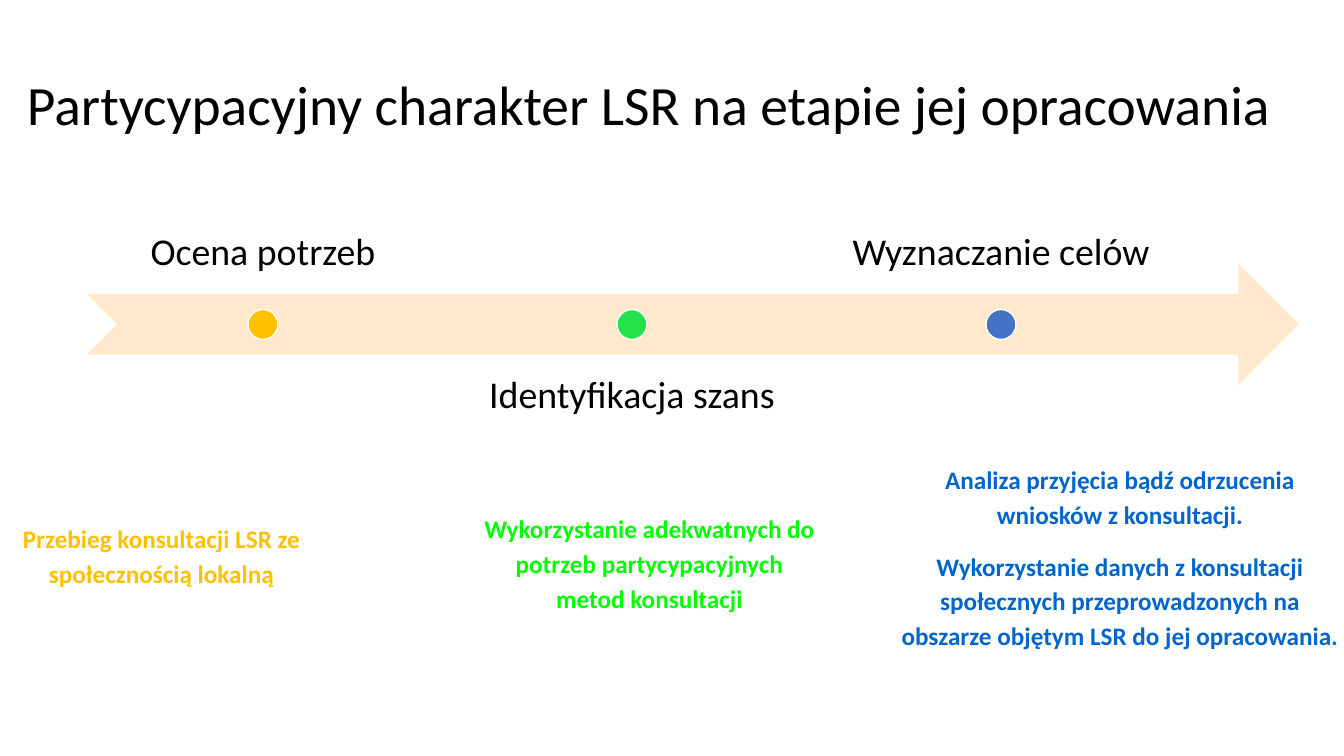
"""Builds a slide with a three-step timeline of participatory LSR preparation."""
from pptx import Presentation
from pptx.dml.color import RGBColor
from pptx.enum.shapes import MSO_SHAPE
from pptx.enum.text import MSO_ANCHOR, PP_ALIGN
from pptx.util import Pt

ARROW, DOT = MSO_SHAPE.NOTCHED_RIGHT_ARROW, MSO_SHAPE.OVAL
TOP, MIDDLE, BOTTOM = MSO_ANCHOR.TOP, MSO_ANCHOR.MIDDLE, MSO_ANCHOR.BOTTOM
LEFT, CENTER = PP_ALIGN.LEFT, PP_ALIGN.CENTER

BLACK = RGBColor(0x00, 0x00, 0x00)
WHITE = RGBColor(0xFF, 0xFF, 0xFF)
CREAM = RGBColor(0xFF, 0xE8, 0xCC)
AMBER = RGBColor(0xFF, 0xC0, 0x00)
EMERALD = RGBColor(0x23, 0xE1, 0x48)
LIME = RGBColor(0x00, 0xFF, 0x00)
STEEL_BLUE = RGBColor(0x44, 0x72, 0xC4)
BLUE = RGBColor(0x00, 0x66, 0xCC)

TITLE = "Partycypacyjny charakter LSR na etapie jej opracowania"
STEPS = [
    ("Ocena potrzeb", AMBER),
    ("Identyfikacja szans", EMERALD),
    ("Wyznaczanie celów", STEEL_BLUE),
]
NOTES = [
    ((1, 514, 321, 419), AMBER,
     ["Przebieg konsultacji LSR ze społecznością lokalną"]),
    ((471, 504, 357, 114), LIME,
     ["Wykorzystanie adekwatnych do potrzeb partycypacyjnych metod konsultacji"]),
    ((888, 455, 464, 242), BLUE,
     ["Analiza przyjęcia bądź odrzucenia wniosków z konsultacji.",
      "Wykorzystanie danych z konsultacji społecznych przeprowadzonych na "
      "obszarze objętym LSR do jej opracowania."]),
]

EMU_PER_PX = 914400 / 100.8
FONT = "Calibri"
SLIDE_SIZE = (1344, 756)
TITLE_BOX = (17, 59, 1294, 96)
ARROW_BOX = (87, 264, 1212, 121)
LABEL_WIDTH, LABEL_HEIGHT, LABEL_INSET = 352, 121, 21
LABEL_TOPS = (173, 355)
STEP_PITCH = 369
DOT_SIZE = 30


def px(length):
    return round(length * EMU_PER_PX)


def add_text(slide, box, lines, size, color, anchor=TOP, align=CENTER,
             spacing=0.9, gap=0, bold=False, insets=(10, 5)):
    frame = slide.shapes.add_textbox(*map(px, box)).text_frame
    frame.word_wrap = True
    frame.vertical_anchor = anchor
    frame.margin_left = frame.margin_right = px(insets[0])
    frame.margin_top = frame.margin_bottom = px(insets[1])
    frame.text = "\n".join(lines)
    for paragraph in frame.paragraphs:
        paragraph.alignment = align
        paragraph.line_spacing = spacing
        paragraph.space_before = paragraph.space_after = Pt(gap)
        font = paragraph.runs[0].font
        font.name, font.size, font.bold = FONT, Pt(size), bold
        font.color.rgb = color


def add_filled_shape(slide, kind, box, color):
    shape = slide.shapes.add_shape(kind, *map(px, box))
    shape.shadow.inherit = False
    shape.fill.solid()
    shape.fill.fore_color.rgb = color
    shape.line.fill.background()
    return shape


def add_timeline(slide):
    left, top, _, height = ARROW_BOX
    add_filled_shape(slide, ARROW, ARROW_BOX, CREAM)
    for index, (label, color) in enumerate(STEPS):
        below = index % 2
        label_left = left + index * STEP_PITCH
        label_box = (label_left, LABEL_TOPS[below], LABEL_WIDTH, LABEL_HEIGHT)
        add_text(slide, label_box, [label], 27, BLACK,
                 anchor=TOP if below else BOTTOM,
                 insets=(LABEL_INSET, LABEL_INSET))
        dot_box = (label_left + (LABEL_WIDTH - DOT_SIZE) / 2,
                   top + (height - DOT_SIZE) / 2, DOT_SIZE, DOT_SIZE)
        dot = add_filled_shape(slide, DOT, dot_box, color)
        dot.line.color.rgb = WHITE
        dot.line.width = Pt(1)


def main():
    presentation = Presentation()
    presentation.slide_width, presentation.slide_height = map(px, SLIDE_SIZE)
    slide = presentation.slides.add_slide(presentation.slide_layouts[6])
    add_text(slide, TITLE_BOX, [TITLE], 39.6, BLACK, anchor=MIDDLE, align=LEFT)
    add_timeline(slide)
    for box, color, lines in NOTES:
        add_text(slide, box, lines, 18, color, spacing=1.15, gap=6, bold=True)
    presentation.save("out.pptx")


if __name__ == "__main__":
    main()
